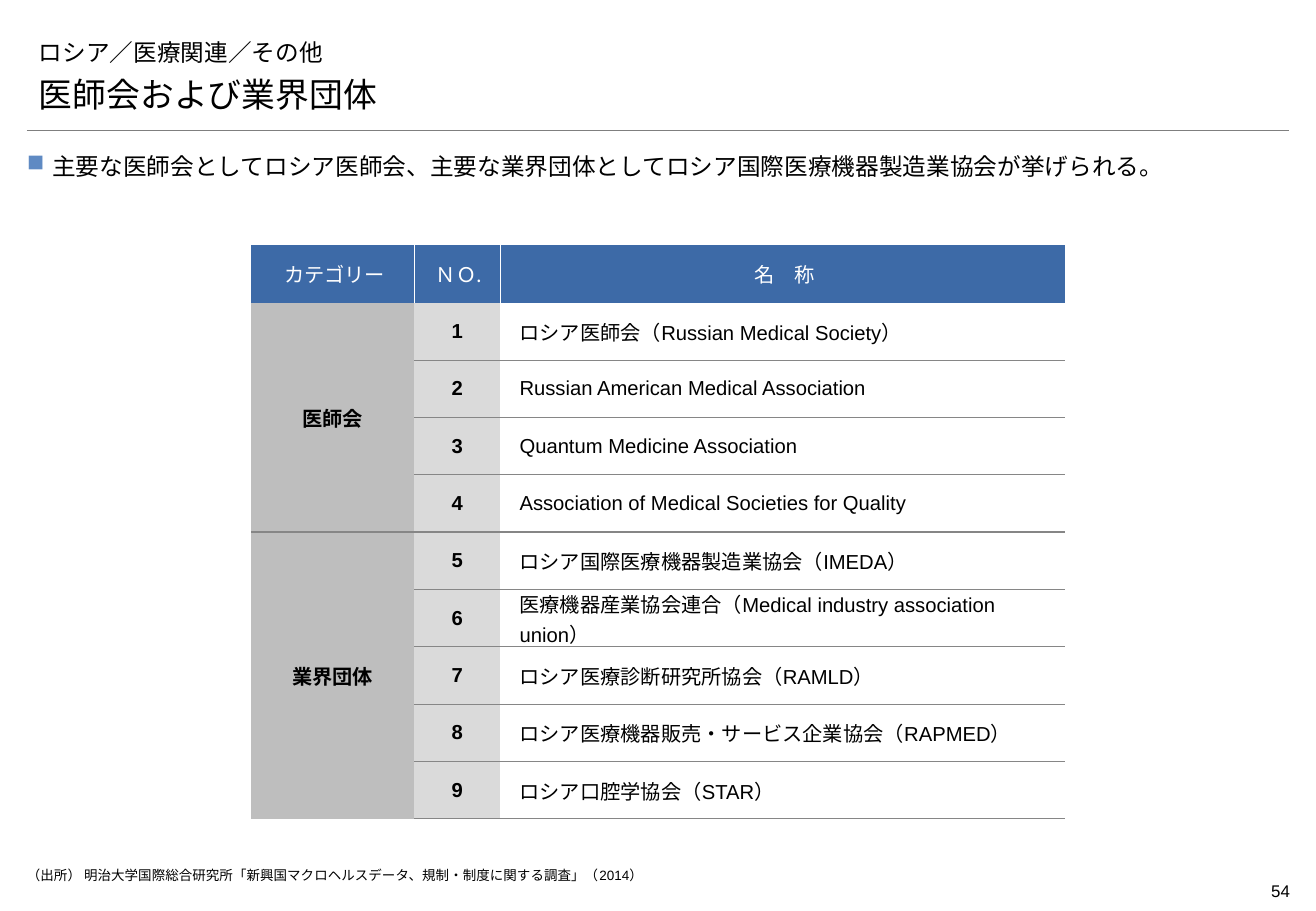
from dataclasses import dataclass

from lxml import etree
from pptx import Presentation
from pptx import util as u
from pptx.dml.color import RGBColor
from pptx.enum import dml, lang, shapes, text
from pptx.oxml import ns

BLACK = RGBColor(0x00, 0x00, 0x00)
WHITE = RGBColor(0xFF, 0xFF, 0xFF)
HEADER_BLUE = RGBColor(0x3D, 0x6A, 0xA7)
BULLET_BLUE = RGBColor(0x5F, 0x8A, 0xC3)
CATEGORY_GREY = RGBColor(0xBE, 0xBE, 0xBE)
NUMBER_GREY = RGBColor(0xDA, 0xDA, 0xDA)
BORDER_GREY = RGBColor(0x86, 0x86, 0x86)
RULE_GREY = RGBColor(0x7F, 0x7F, 0x7F)

JAPANESE_FONT = "Noto Sans CJK JP"
PLAIN_TABLE_STYLE = "{2D5ABB26-0587-4C30-8999-92F81FD0307C}"
LEFT = 16
CONTENT_WIDTH = 748
COLUMN_WIDTHS = (96.5, 51, 335)
ROW_HEIGHT = 34


@dataclass
class Label:
    words: str
    left: float
    top: float
    width: float
    height: float
    size: float
    font: str = "Arial"
    side: float = 0
    edge: float = 0
    anchor: text.MSO_ANCHOR = text.MSO_ANCHOR.TOP
    align: text.PP_ALIGN = text.PP_ALIGN.LEFT


@dataclass
class Group:
    category: str
    names: list[str]


@dataclass
class CellStyle:
    fill: RGBColor
    color: RGBColor = BLACK
    font: str = "Arial"
    bold: bool = False
    align: text.PP_ALIGN = text.PP_ALIGN.CENTER
    left_margin: float = 5


LABELS = [
    Label("ロシア／医療関連／その他", LEFT, 15, CONTENT_WIDTH, 28, 14, "Montserrat",
          7.2, 3.6, text.MSO_ANCHOR.BOTTOM),
    Label("医師会および業界団体", LEFT, 43, CONTENT_WIDTH, 28, 20, JAPANESE_FONT,
          7.2, 3.6, text.MSO_ANCHOR.BOTTOM),
    Label("（出所） 明治大学国際総合研究所「新興国マクロヘルスデータ、規制・制度に関する調査」（2014）",
          LEFT, 514, 720, 12, 8),
    Label("54", 707.5, 518.5, 57, 19, 10, edge=3.6, align=text.PP_ALIGN.RIGHT),
]
MESSAGE = Label(
    "主要な医師会としてロシア医師会、主要な業界団体としてロシア国際医療機器製造業協会が挙げられる。",
    LEFT, 88.5, CONTENT_WIDTH, 17, 14, align=text.PP_ALIGN.JUSTIFY)

HEADINGS = ("カテゴリー", "ＮＯ.", "名　称")
GROUPS = [
    Group("医師会", [
        "ロシア医師会（Russian Medical Society）",
        "Russian American Medical Association",
        "Quantum Medicine Association",
        "Association of Medical Societies for Quality",
    ]),
    Group("業界団体", [
        "ロシア国際医療機器製造業協会（IMEDA）",
        "医療機器産業協会連合（Medical industry association union）",
        "ロシア医療診断研究所協会（RAMLD）",
        "ロシア医療機器販売・サービス企業協会（RAPMED）",
        "ロシア口腔学協会（STAR）",
    ]),
]
HEADER_STYLE = CellStyle(HEADER_BLUE, WHITE, JAPANESE_FONT, left_margin=7.2)
CATEGORY_STYLE = CellStyle(CATEGORY_GREY, font=JAPANESE_FONT, bold=True)
NUMBER_STYLE = CellStyle(NUMBER_GREY, bold=True)
NAME_STYLE = CellStyle(WHITE, align=text.PP_ALIGN.LEFT, left_margin=11.5)


def format_runs(paragraph, size: float, font: str, color: RGBColor, bold: bool = False) -> None:
    for run in paragraph.runs:
        run.font.size = u.Pt(size)
        run.font.name = font
        run.font.bold = bold
        run.font.color.rgb = color
        run.font.language_id = lang.MSO_LANGUAGE_ID.JAPANESE
        latin = run.font._element.find(ns.qn("a:latin"))
        latin.addnext(etree.Element(ns.qn("a:ea"), typeface=JAPANESE_FONT))


def add_label(slide, label: Label):
    box = slide.shapes.add_textbox(*map(u.Pt, (label.left, label.top, label.width, label.height)))
    frame = box.text_frame
    frame.word_wrap = True
    frame.vertical_anchor = label.anchor
    frame.margin_left = frame.margin_right = u.Pt(label.side)
    frame.margin_top = frame.margin_bottom = u.Pt(label.edge)
    frame.text = label.words
    paragraph = frame.paragraphs[0]
    paragraph.alignment = label.align
    format_runs(paragraph, label.size, label.font, BLACK)
    return paragraph


def add_bullet(paragraph, indent: float) -> None:
    properties = paragraph._p.get_or_add_pPr()
    properties.set("marL", str(u.Pt(indent)))
    properties.set("indent", str(-u.Pt(indent)))
    bullet_color = etree.SubElement(properties, ns.qn("a:buClr"))
    etree.SubElement(bullet_color, ns.qn("a:srgbClr"), val=str(BULLET_BLUE))
    etree.SubElement(properties, ns.qn("a:buChar"), char="■")
    paragraph.line_spacing = 1.1
    paragraph.space_after = u.Pt(2)


def add_rule(slide) -> None:
    rule = slide.shapes.add_connector(
        shapes.MSO_CONNECTOR.STRAIGHT, *map(u.Pt, (LEFT, 77, LEFT + CONTENT_WIDTH, 77)))
    rule.line.color.rgb = RULE_GREY
    rule.line.width = u.Pt(0.25)
    etree.SubElement(rule._element.spPr, ns.qn("a:effectLst"))


def fill_cell(cell, words: str, style: CellStyle) -> None:
    cell.fill.solid()
    cell.fill.fore_color.rgb = style.fill
    cell.vertical_anchor = text.MSO_ANCHOR.MIDDLE
    cell.margin_left = u.Pt(style.left_margin)
    cell.margin_right = u.Pt(5)
    cell.margin_top = cell.margin_bottom = 0
    cell.text_frame.text = words
    paragraph = cell.text_frame.paragraphs[0]
    paragraph.alignment = style.align
    format_runs(paragraph, 12, style.font, style.color, style.bold)


def add_border(cell, side: str, color: RGBColor, width: float) -> None:
    properties = cell._tc.get_or_add_tcPr()
    line = etree.Element(ns.qn(f"a:ln{side}"), w=str(u.Pt(width)))
    solid = etree.SubElement(line, ns.qn("a:solidFill"))
    etree.SubElement(solid, ns.qn("a:srgbClr"), val=str(color))
    borders = [child for child in properties if etree.QName(child).localname.startswith("ln")]
    properties.insert(len(borders), line)


def add_association_table(slide) -> None:
    row_count = 1 + sum(len(group.names) for group in GROUPS)
    frame = slide.shapes.add_table(
        row_count, len(HEADINGS),
        *map(u.Pt, (149, 145.5, sum(COLUMN_WIDTHS), row_count * ROW_HEIGHT)))
    table = frame.table
    table._tbl.tblPr.find(ns.qn("a:tableStyleId")).text = PLAIN_TABLE_STYLE
    table.horz_banding = False
    for column, width in zip(table.columns, COLUMN_WIDTHS):
        column.width = u.Pt(width)
    for row in table.rows:
        row.height = u.Pt(ROW_HEIGHT)

    # Heading row with white dividers
    for index, heading in enumerate(HEADINGS):
        fill_cell(table.cell(0, index), heading, HEADER_STYLE)
        if index > 0:
            add_border(table.cell(0, index), "L", WHITE, 0.5)
        if index < len(HEADINGS) - 1:
            add_border(table.cell(0, index), "R", WHITE, 0.5)

    # Category blocks, with a heavier line between them
    first = 1
    for group in GROUPS:
        last = first + len(group.names) - 1
        for row, name in enumerate(group.names, first):
            fill_cell(table.cell(row, 0), group.category if row == first else "", CATEGORY_STYLE)
            fill_cell(table.cell(row, 1), str(row), NUMBER_STYLE)
            fill_cell(table.cell(row, 2), name, NAME_STYLE)
            for column in (1, 2):
                cell = table.cell(row, column)
                if row > 1:
                    add_border(cell, "T", BORDER_GREY, 1.5 if row == first else 0.5)
                heavy = row == last and last < row_count - 1
                add_border(cell, "B", BORDER_GREY, 1.5 if heavy else 0.5)
        if first > 1:
            add_border(table.cell(first, 0), "T", BORDER_GREY, 1.5)
        if last < row_count - 1:
            for row in (first, last):
                add_border(table.cell(row, 0), "B", BORDER_GREY, 1.5)
        table.cell(first, 0).merge(table.cell(last, 0))
        first = last + 1


def main() -> None:
    presentation = Presentation()
    presentation.slide_width = u.Pt(780)
    presentation.slide_height = u.Pt(540)
    slide = presentation.slides.add_slide(presentation.slide_layouts[6])
    slide.background.fill.solid()
    slide.background.fill.fore_color.rgb = WHITE

    # Titles, source and page number
    add_rule(slide)
    for label in LABELS:
        add_label(slide, label)

    # Key message and table
    add_bullet(add_label(slide, MESSAGE), 15)
    add_association_table(slide)
    presentation.save("out.pptx")


if __name__ == "__main__":
    main()
